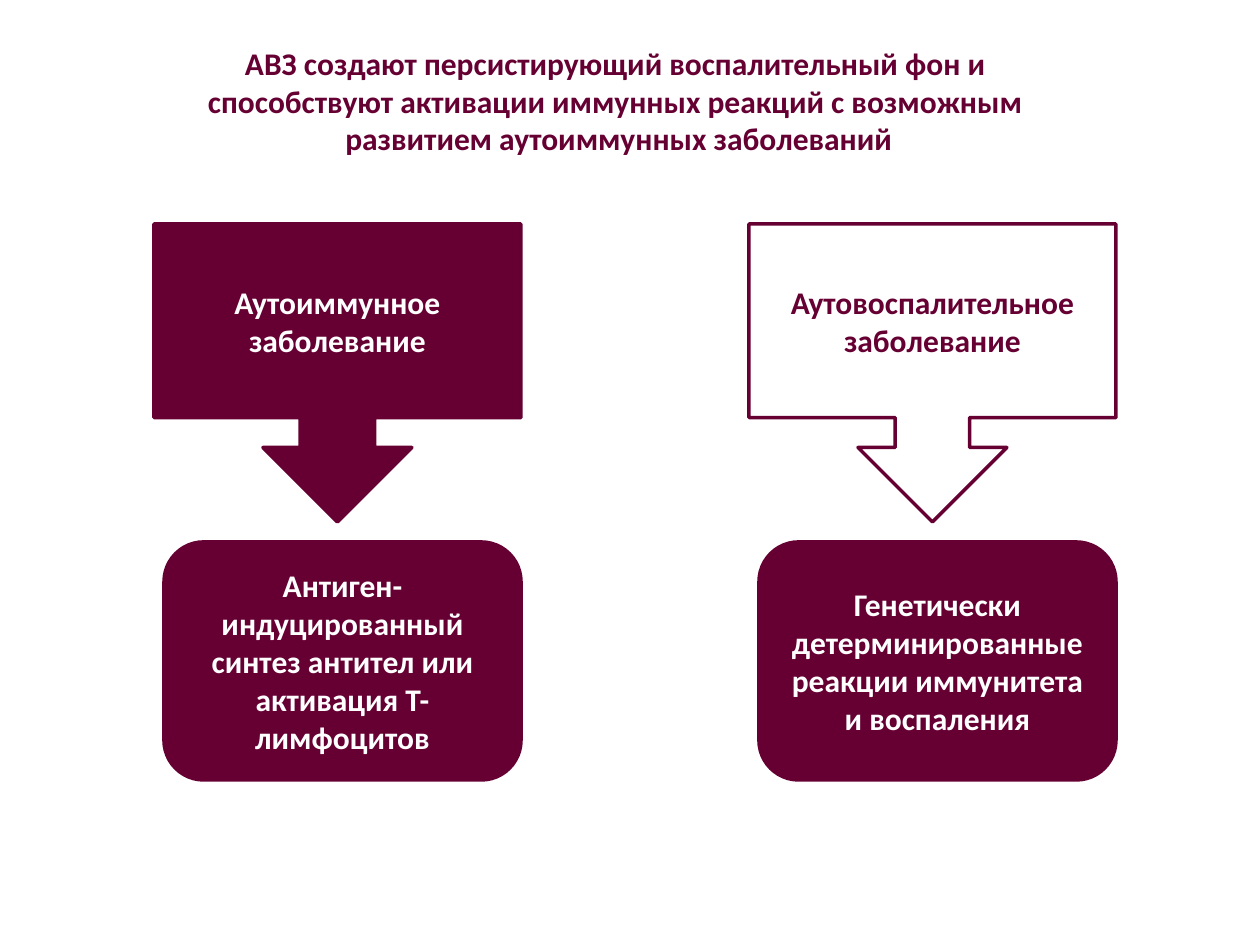
from pptx import Presentation
from pptx.dml.color import RGBColor
from pptx.enum.shapes import MSO_SHAPE
from pptx.enum.text import MSO_ANCHOR, MSO_AUTO_SIZE, PP_ALIGN
from pptx.util import Emu, Pt

EMU_PER_PX = 914400 // 126
BURGUNDY = "660033"
WHITE = "FFFFFF"
FONT_FORMAT = {"name": "Calibri", "size": Pt(18), "bold": True}

TITLE_LINES = [
    "АВЗ создают персистирующий воспалительный фон и ",
    "способствуют активации иммунных реакций с возможным ",
    "развитием аутоиммунных заболеваний",
]
# left edge, disease, callout fill, callout text colour, mechanism
COLUMNS = [
    (154, "Аутоиммунное заболевание", BURGUNDY, WHITE,
     "Антиген-индуцированный синтез антител или активация Т-лимфоцитов"),
    (749, "Аутовоспалительное заболевание", WHITE, BURGUNDY,
     "Генетически детерминированные реакции иммунитета и воспаления"),
]


def px(length):
    return Emu(length * EMU_PER_PX)


def color(hex_string):
    return RGBColor.from_string(hex_string)


def write_text(shape, lines, text_color, wrap=True):
    """Fill the shape with centred paragraphs, one for each line."""
    frame = shape.text_frame
    frame_format = {
        "word_wrap": wrap,
        "auto_size": MSO_AUTO_SIZE.NONE,
        "vertical_anchor": MSO_ANCHOR.MIDDLE,
    }
    for name, value in frame_format.items():
        setattr(frame, name, value)
    frame.text = "\n".join(lines)
    for paragraph in frame.paragraphs:
        paragraph.alignment = PP_ALIGN.CENTER
        font = paragraph.runs[0].font
        for name, value in FONT_FORMAT.items():
            setattr(font, name, value)
        font.color.rgb = color(text_color)


def add_title(slide):
    title = slide.shapes.title
    position = {"left": 192, "top": 37, "width": 854, "height": 127}
    for name, value in position.items():
        setattr(title, name, px(value))
    write_text(title, TITLE_LINES, BURGUNDY, wrap=False)


def add_box(slide, preset, box, text, fill, text_color):
    shape = slide.shapes.add_shape(preset, *map(px, box))
    shape.shadow.inherit = False
    shape.fill.solid()
    shape.fill.fore_color.rgb = color(fill)
    shape.line.color.rgb = color(BURGUNDY)
    shape.line.width = Pt(2)
    write_text(shape, [text], text_color)


def add_column(slide, left, disease, fill, text_color, mechanism):
    add_box(slide, MSO_SHAPE.DOWN_ARROW_CALLOUT, (left, 224, 367, 298),
            disease, fill, text_color)
    add_box(slide, MSO_SHAPE.ROUNDED_RECTANGLE, (left + 10, 542, 357, 238),
            mechanism, BURGUNDY, WHITE)


def main():
    presentation = Presentation()
    presentation.slide_width = px(1260)
    presentation.slide_height = px(945)
    slide = presentation.slides.add_slide(presentation.slide_layouts[5])
    add_title(slide)
    for column in COLUMNS:
        add_column(slide, *column)
    presentation.save("out.pptx")


if __name__ == "__main__":
    main()
